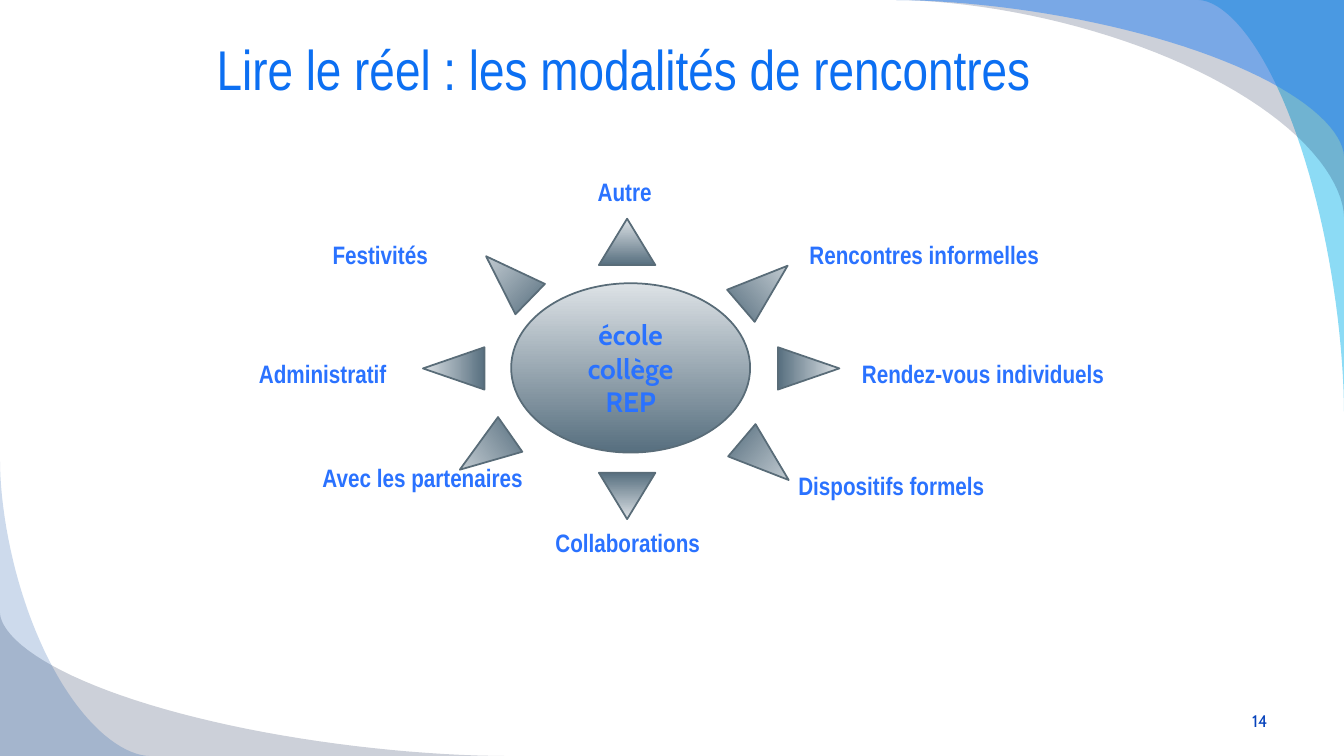
import math
from lxml import etree
from pptx import Presentation
from pptx.dml.color import RGBColor
from pptx.enum.shapes import MSO_SHAPE
from pptx.enum.text import MSO_ANCHOR, PP_ALIGN
from pptx.oxml.ns import qn
from pptx.util import Inches, Pt

ELLIPSE, TRIANGLE = MSO_SHAPE.OVAL, MSO_SHAPE.ISOSCELES_TRIANGLE
TOP, MIDDLE = MSO_ANCHOR.TOP, MSO_ANCHOR.MIDDLE
LEFT, CENTER, RIGHT = PP_ALIGN.LEFT, PP_ALIGN.CENTER, PP_ALIGN.RIGHT

WIDTH, HEIGHT = 13.33, 7.5
NARROW, CABIN = "Arial Narrow", "Cabin"
COLORS = {
    "title": "0C6FF2", "label": "2A72FF", "number": "0743BC",
    "dark": "576F7F", "light": "DDE2E6", "outline": "596C78",
    "cyan": "00B1E9", "navy": "021741", "azure": "247FF4", "blue": "084AA1",
}

# corner x, corner y, signed reach along x and y, colour, opacity in percent
SWOOSHES = [
    (WIDTH, 0, -1.44, 4.08, "cyan", 45),
    (WIDTH, 0, -4.44, 2.15, "navy", 20),
    (WIDTH, 0, -4.44, 1.55, "azure", 49),
    (0, HEIGHT, 5, -1.42, "navy", 20),
    (0, HEIGHT, 1.48, -2.92, "blue", 20),
]
CURVE_POWER = 1.75
CURVE_STEPS = 40

# Offsets below are measured from the top left corner of the diagram.
DIAGRAM = (2.47, 1.7, 9.35, 3.88)
HUB = (2.6, 1.11, 2.37, 1.68)
UPRIGHT, SIDEWAYS = (0.56, 0.46), (0.42, 0.61)
# label, its left, top and width, then triangle left, top, size and rotation
RAYS = [
    ("Autre", 3.36, 0, 0.84, 3.47, 0.47, UPRIGHT, 0),
    ("Rencontres informelles", 5.46, 0.63, 2.73, 4.9, 0.83, SIDEWAYS, 49.4),
    ("Rendez-vous individuels", 5.98, 1.81, 2.83, 5.34, 1.65, SIDEWAYS, 90),
    ("Dispositifs formels", 5.35, 2.92, 4, 4.91, 2.56, SIDEWAYS, 130.3),
    ("Collaborations", 2.94, 3.48, 1.78, 3.47, 2.99, UPRIGHT, 180),
    ("Avec les partenaires", 0.63, 2.84, 2.31, 2.13, 2.48, SIDEWAYS, 235),
    ("Administratif", 0, 1.81, 1.57, 1.82, 1.65, SIDEWAYS, 270),
    ("Festivités", 0.73, 0.63, 1.26, 2.36, 0.75, SIDEWAYS, 314.2),
]


def rgb(name):
    return RGBColor.from_string(COLORS[name])


def write(shape, lines, size, font, color, bold=False, align=LEFT, anchor=TOP):
    frame = shape.text_frame
    frame.word_wrap = True
    frame.vertical_anchor = anchor
    frame.text = "\n".join(lines)
    for para in frame.paragraphs:
        para.alignment = align
        para.font.size = Pt(size)
        para.font.name = font
        para.font.bold = bold
        para.font.color.rgb = rgb(color)


def add_text(page, box, *args, **options):
    write(page.shapes.add_textbox(*map(Inches, box)), *args, **options)


def add_shaded(page, kind, box, rotation=0):
    """Add a shape that fades from a dark base to a light top."""
    shape = page.shapes.add_shape(kind, *map(Inches, box))
    shape.shadow.inherit = False
    shape.rotation = rotation
    shape.fill.gradient()
    shape.fill.gradient_angle = 90
    for stop, name, position in zip(shape.fill.gradient_stops, ("dark", "light"), (0, 1)):
        stop.color.rgb = rgb(name)
        stop.position = position
    shape.line.color.rgb = rgb("outline")
    shape.line.width = Pt(1.25)
    return shape


def add_swoosh(page, corner_x, corner_y, reach_x, reach_y, color, opacity):
    """Fill a slide corner up to an inward curve between its two edges."""
    points = []
    for step in range(CURVE_STEPS + 1):
        angle = math.pi / 2 * step / CURVE_STEPS
        along_x = 1 - math.sin(angle) ** (2 / CURVE_POWER)
        along_y = 1 - abs(math.cos(angle)) ** (2 / CURVE_POWER)
        points.append((Inches(corner_x + reach_x * along_x),
                       Inches(corner_y + reach_y * along_y)))
    builder = page.shapes.build_freeform(Inches(corner_x), Inches(corner_y))
    builder.add_line_segments(points, close=True)
    shape = builder.convert_to_shape()
    shape.shadow.inherit = False
    shape.line.fill.background()
    shape.fill.solid()
    shape.fill.fore_color.rgb = rgb(color)
    tint = shape.fill._xPr.find(qn("a:solidFill"))[0]
    etree.SubElement(tint, qn("a:alpha")).set("val", str(opacity * 1000))


def add_diagram(page, box):
    left, top = box[:2]
    hub_left, hub_top, hub_width, hub_height = HUB
    hub = add_shaded(page, ELLIPSE, (left + hub_left, top + hub_top, hub_width, hub_height))
    write(hub, ["école collège", "REP"], 20, CABIN, "label",
          bold=True, align=CENTER, anchor=MIDDLE)
    for label, text_x, text_y, text_width, ray_x, ray_y, size, rotation in RAYS:
        add_shaded(page, TRIANGLE, (left + ray_x, top + ray_y, *size), rotation)
        add_text(page, (left + text_x, top + text_y, text_width, 0.4),
                 [label], 18, NARROW, "label", bold=True)


def main():
    deck = Presentation()
    deck.slide_width, deck.slide_height = Inches(WIDTH), Inches(HEIGHT)
    page = deck.slides.add_slide(deck.slide_layouts[6])
    for swoosh in SWOOSHES:
        add_swoosh(page, *swoosh)
    add_diagram(page, DIAGRAM)
    add_text(page, (2.05, 0.44, 11.28, 0.48),
             ["Lire le réel : les modalités de rencontres"], 40, NARROW, "title", anchor=MIDDLE)
    add_text(page, (9.56, 6.95, 3.11, 0.4), ["14"], 12, CABIN, "number",
             align=RIGHT, anchor=MIDDLE)
    deck.save("out.pptx")


if __name__ == "__main__":
    main()
